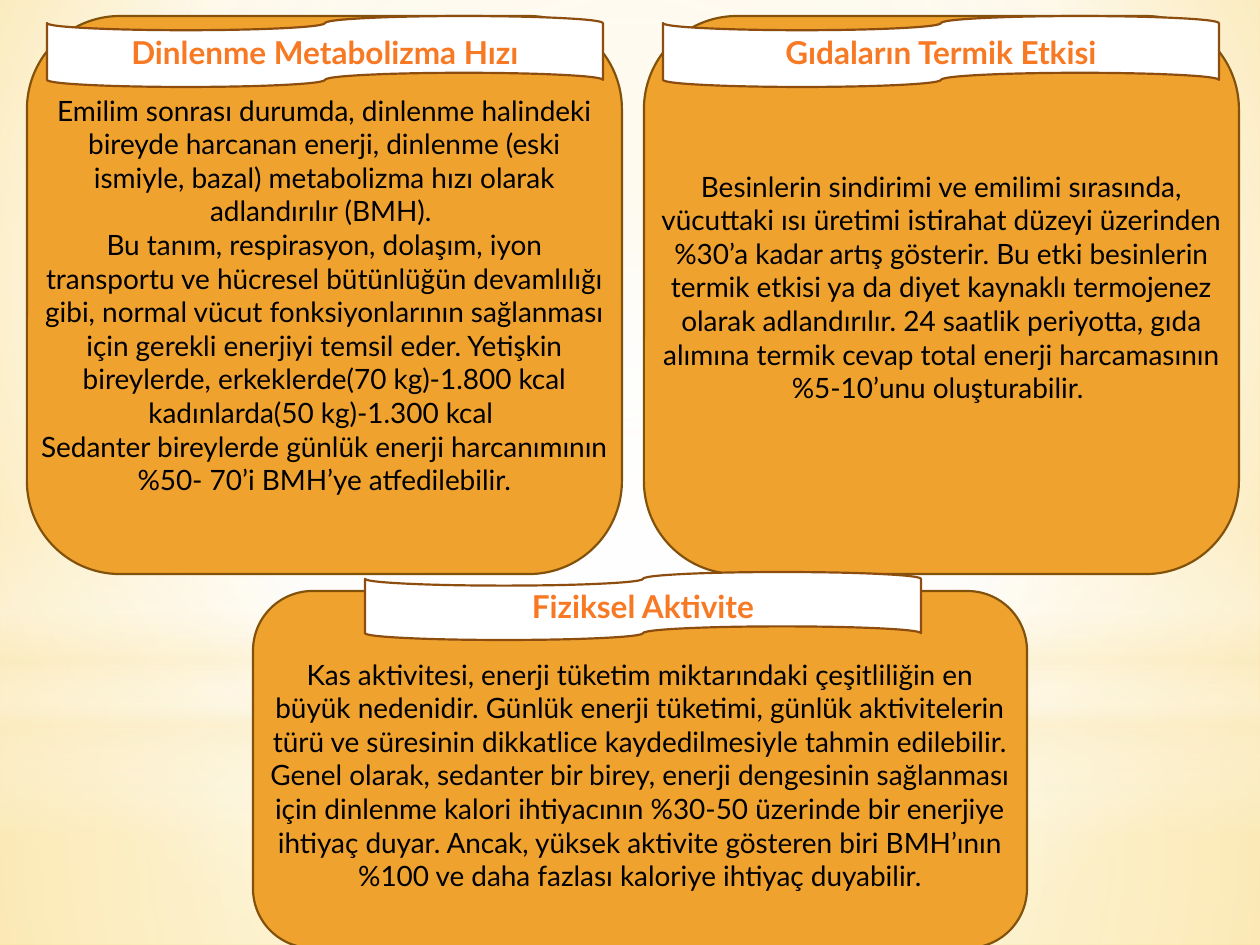
from lxml import etree
from pptx import Presentation
from pptx import util as u
from pptx.dml import color
from pptx.enum import shapes, text
from pptx.oxml import ns

SCALE = 914400 / 126
FONT = "Lato"
W, H = 1260, 945


def px(n):
    return u.Emu(round(n * SCALE))


def rgb(value):
    return color.RGBColor.from_string(value)


def set_gradient(fill, parent, stops, focus=None):
    fill.gradient()
    old = parent.find(ns.qn("a:gradFill"))
    grad = etree.Element(ns.qn("a:gradFill"), rotWithShape="1")
    gs_list = etree.SubElement(grad, ns.qn("a:gsLst"))
    for pos, value, alpha in stops:
        gs = etree.SubElement(gs_list, ns.qn("a:gs"), pos=str(pos * 1000))
        clr = etree.SubElement(gs, ns.qn("a:srgbClr"), val=value)
        if alpha < 100:
            etree.SubElement(clr, ns.qn("a:alpha"), val=str(alpha * 1000))
    if focus:
        circle = etree.SubElement(grad, ns.qn("a:path"))
        circle.set("path", "circle")
        sides = {k: str(v * 1000) for k, v in zip("ltrb", focus)}
        etree.SubElement(circle, ns.qn("a:fillToRect"), **sides)
    else:
        etree.SubElement(grad, ns.qn("a:lin"), ang="5400000", scaled="0")
    parent.replace(old, grad)


def add_shape(s, kind, box):
    sp = s.shapes.add_shape(kind, *map(px, box))
    sp.shadow.inherit = False
    return sp


def outlined(s, kind, box, fill, line):
    sp = add_shape(s, kind, box)
    sp.fill.solid()
    sp.fill.fore_color.rgb = rgb(fill)
    sp.line.color.rgb = rgb(line)
    sp.line.width = u.Pt(1.25)
    return sp


def write(sp, lines, size, value, bold=False):
    tf = sp.text_frame
    tf.word_wrap = True
    tf.text = "\n".join(lines)
    for p in tf.paragraphs:
        p.alignment = text.PP_ALIGN.CENTER
        for r in p.runs:
            r.font.name = FONT
            r.font.size = u.Pt(size)
            r.font.bold = bold
            r.font.color.rgb = rgb(value)
    return tf


def add_backdrop(s):
    bg = s.background.fill
    bg.gradient()
    set_gradient(bg, s._element.find(".//" + ns.qn("p:bgPr")),
                 [(0, "FEEAB3", 100), (60, "FFFFFF", 100), (100, "FFD96C", 100)],
                 (20, 10, 20, 60))
    rect, oval = shapes.MSO_SHAPE.RECTANGLE, shapes.MSO_SHAPE.OVAL
    centre = (50, 50, 50, 50)
    layers = [
        (rect, (0, 703, W, 242), centre,
         [(0, "FFFFFF", 91), (37, "FFFFFF", 76), (100, "FBEEC9", 79)]),
        (rect, (0, 0, W, 703), centre,
         [(0, "FFFFFF", 89), (48, "FFFFFF", 62), (100, "FBEEC9", 79)]),
        (rect, (0, 519, W, 315), None,
         [(0, "FFFFFF", 0), (29, "FFFFFF", 30), (45, "FBEEC9", 40),
          (55, "FFFFFF", 26), (65, "FBEEC9", 60), (100, "FFFFFF", 0)]),
        (oval, (0, 221, W, 703), centre,
         [(0, "FFFFFF", 100), (56, "FFFFFF", 0)]),
    ]
    for kind, box, focus, stops in layers:
        sp = add_shape(s, kind, box)
        sp.line.fill.background()
        set_gradient(sp.fill, sp._element.spPr, stops, focus)


def add_card(s, box, banner, body, title, lines):
    x, y, w, h = box
    outlined(s, shapes.MSO_SHAPE.ROUNDED_RECTANGLE, box, "F0A22E", "82520B")

    dx, dy, bh = banner
    tape = outlined(s, shapes.MSO_SHAPE.FLOWCHART_PUNCHED_TAPE,
                    (x + dx, y + dy, 556, bh), "FFFFFF", "8C4D0F")
    tf = write(tape, [title], 18, "F87924", True)
    tf.vertical_anchor = text.MSO_ANCHOR.MIDDLE

    top, height = body
    tb = s.shapes.add_textbox(*map(px, (x, y + top, w, height)))
    tf = write(tb, lines, 16, "000000")
    tf.auto_size = text.MSO_AUTO_SIZE.SHAPE_TO_FIT_TEXT


def main():
    prs = Presentation()
    prs.slide_width, prs.slide_height = px(W), px(H)
    s = prs.slides.add_slide(prs.slide_layouts[6])
    add_backdrop(s)
    add_card(s, (27, 16, 595, 558), (20, 0, 71), (71, 488),
             "Dinlenme Metabolizma Hızı", [
        "Emilim sonrası durumda, dinlenme halindeki bireyde harcanan enerji, "
        "dinlenme (eski ismiyle, bazal) metabolizma hızı olarak adlandırılır (BMH). ",
        "Bu tanım, respirasyon, dolaşım, iyon transportu ve hücresel bütünlüğün "
        "devamlılığı gibi, normal vücut fonksiyonlarının sağlanması için gerekli "
        "enerjiyi temsil eder. Yetişkin bireylerde, erkeklerde(70 kg)-1.800 kcal "
        "kadınlarda(50 kg)-1.300 kcal ",
        "Sedanter bireylerde günlük enerji harcanımının %50- 70’i BMH’ye "
        "atfedilebilir."])
    add_card(s, (644, 16, 595, 558), (19, 0, 71), (147, 251),
             "Gıdaların Termik Etkisi", [
        "Besinlerin sindirimi ve emilimi sırasında, vücuttaki ısı üretimi istirahat "
        "düzeyi üzerinden %30’a kadar artış gösterir. Bu etki besinlerin termik "
        "etkisi ya da diyet kaynaklı termojenez olarak adlandırılır. 24 saatlik "
        "periyotta, gıda alımına termik cevap total enerji harcamasının "
        "%5-10’unu oluşturabilir. "])
    add_card(s, (253, 591, 774, 357), (112, -19, 68), (60, 285),
             "Fiziksel Aktivite", [
        "Kas aktivitesi, enerji tüketim miktarındaki çeşitliliğin en büyük "
        "nedenidir. Günlük enerji tüketimi, günlük aktivitelerin türü ve süresinin "
        "dikkatlice kaydedilmesiyle tahmin edilebilir. Genel olarak, sedanter bir "
        "birey, enerji dengesinin sağlanması için dinlenme kalori ihtiyacının "
        "%30-50 üzerinde bir enerjiye ihtiyaç duyar. Ancak, yüksek aktivite "
        "gösteren biri BMH’ının %100 ve daha fazlası kaloriye ihtiyaç duyabilir."])
    prs.save("out.pptx")


if __name__ == "__main__":
    main()
